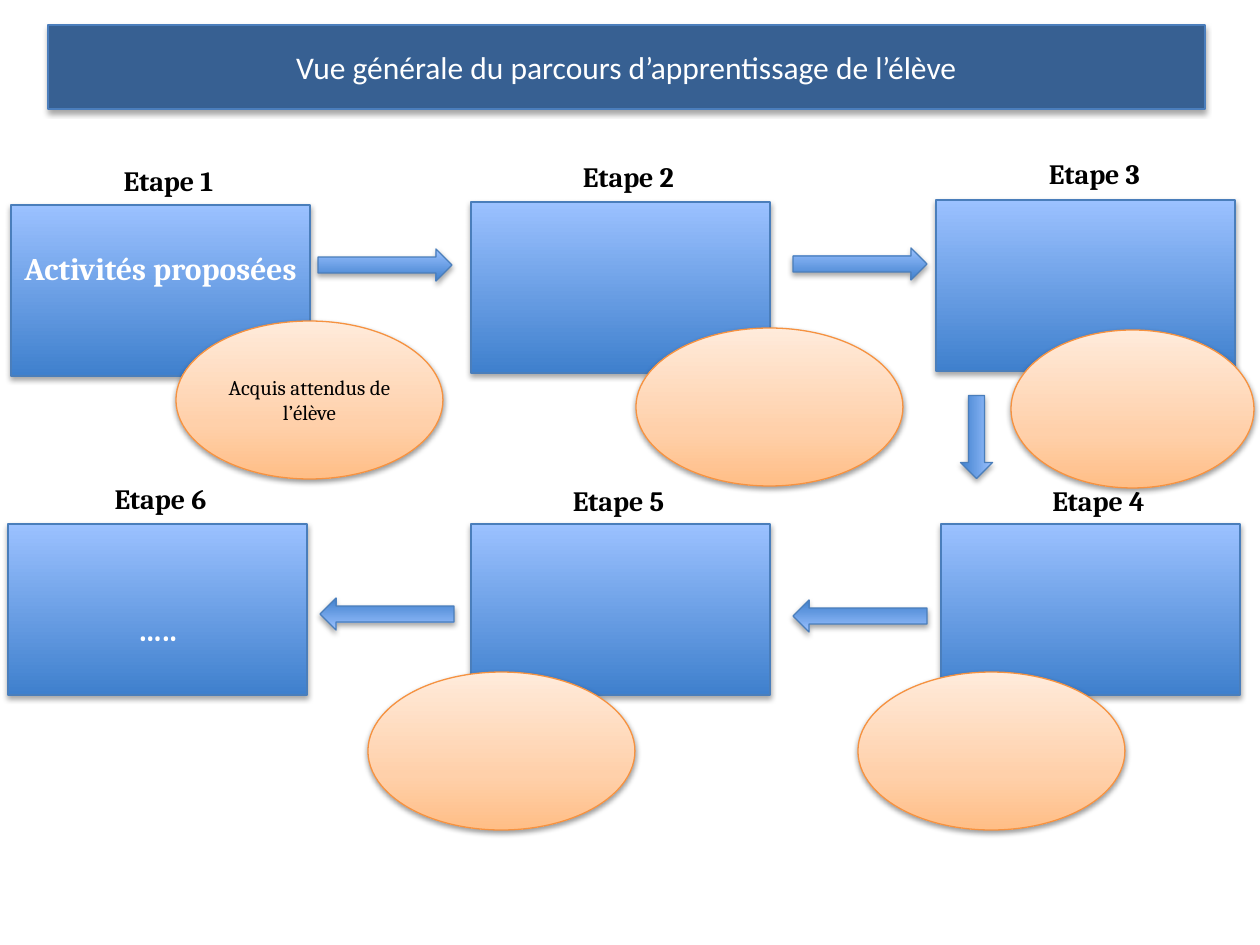
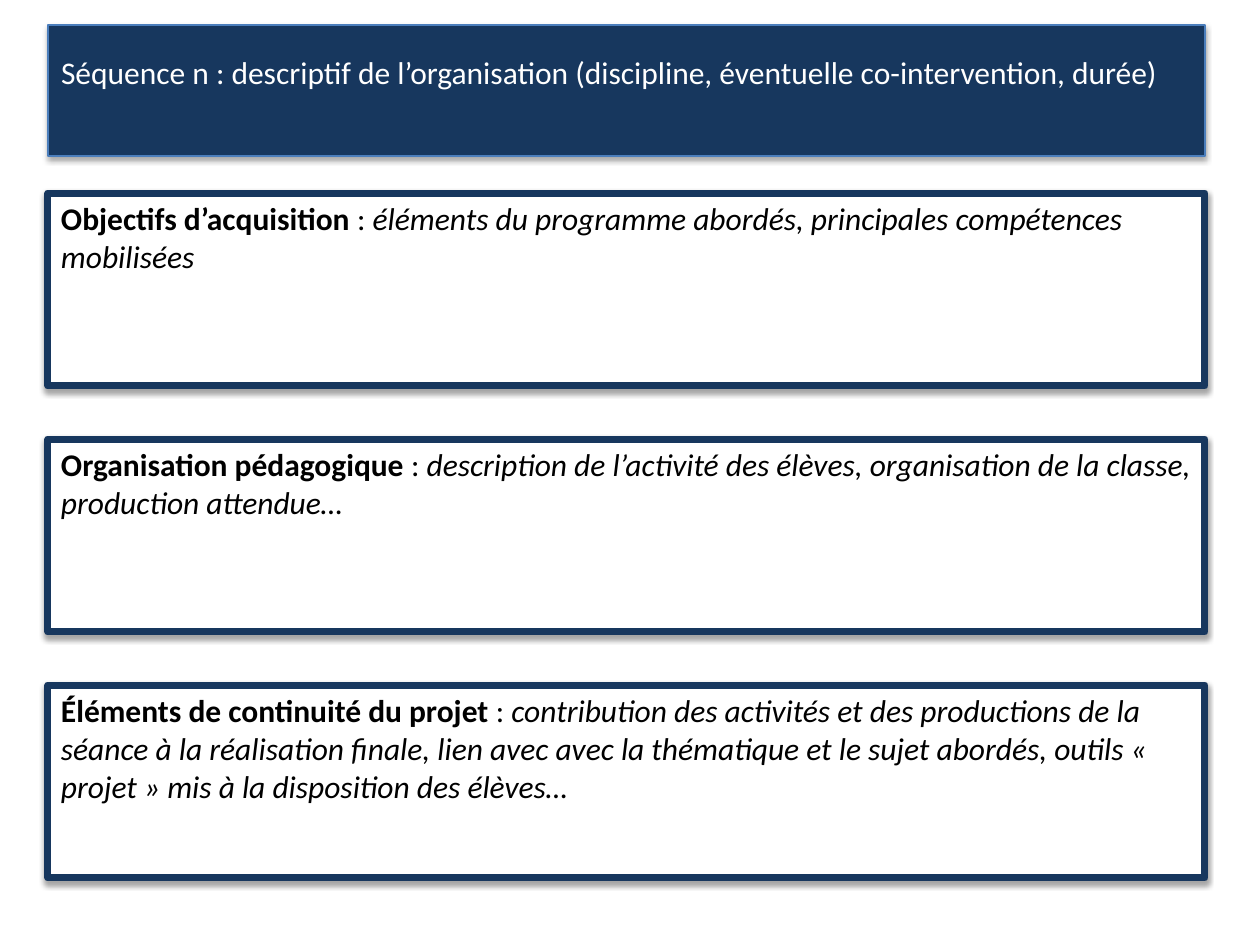
from copy import deepcopy
from dataclasses import dataclass

from lxml import etree
from pptx import Presentation
from pptx.dml.color import RGBColor
from pptx.enum.shapes import MSO_SHAPE
from pptx.enum.text import MSO_ANCHOR, MSO_AUTO_SIZE, PP_ALIGN
from pptx.oxml.ns import qn
from pptx.util import Pt

RECT, OVAL, ARROW = MSO_SHAPE.RECTANGLE, MSO_SHAPE.OVAL, MSO_SHAPE.RIGHT_ARROW
TOP, MIDDLE = MSO_ANCHOR.TOP, MSO_ANCHOR.MIDDLE
LEFT, CENTER = PP_ALIGN.LEFT, PP_ALIGN.CENTER
NO_FIT = MSO_AUTO_SIZE.NONE
TITLE_ONLY = 5
EMU_PER_PX = 914400 / 126


@dataclass(frozen=True)
class Theme:
    sans: str = "Calibri"
    serif: str = "Cambria"
    body: int = 18
    label: int = 16
    small: int = 12
    white: str = "FFFFFF"
    black: str = "000000"
    band: str = "376092"
    navy: str = "17375E"
    band_line: str = "4B7EBC"
    blue_line: str = "4A7EBB"
    orange_line: str = "F69240"
    blue: tuple = ((0, "9BC1FF"), (1, "3F80CD"))
    orange: tuple = ((0, "FFEBDB"), (0.65, "FFD0AA"), (1, "FFBE86"))
    thin: float = 0.75
    thick: float = 4


T = Theme()
MARGIN_X, BAND_W = 48, 1157
BOX_W, BOX_H = 299, 171
LABEL_W, LABEL_H = 315, 48
OVAL_W, OVAL_H = 267, 158
ARROW_W, ARROW_H = 134, 32
PANEL_TOP, PANEL_H, PANEL_STEP = 193, 193, 246
INSET_X, INSET_Y, LINE_SHIFT = 13, 6, 38


def px(n):
    return round(n * EMU_PER_PX)


def rgb(code):
    return RGBColor.from_string(code)


def set_gradient(shape, stops):
    shape.fill.gradient()
    shape.fill.gradient_angle = 270
    gs_list = shape._element.spPr.find(".//" + qn("a:gsLst"))
    while len(gs_list) < len(stops):
        gs_list.append(deepcopy(gs_list[-1]))
    for stop, (position, color) in zip(shape.fill.gradient_stops, stops):
        stop.position = position
        stop.color.rgb = rgb(color)


def set_shadow(shape, alpha=35, dist=23000):
    shape.shadow.inherit = False
    effects = shape._element.spPr.find(qn("a:effectLst"))
    shadow = etree.SubElement(effects, qn("a:outerShdw"), blurRad="40000",
                              dist=str(dist), dir="5400000", rotWithShape="0")
    color = etree.SubElement(shadow, qn("a:srgbClr"), val=T.black)
    etree.SubElement(color, qn("a:alpha"), val=str(alpha * 1000))


def style(shape, fill, line, width=T.thin, **shadow):
    if isinstance(fill, str):
        shape.fill.solid()
        shape.fill.fore_color.rgb = rgb(fill)
    else:
        set_gradient(shape, fill)
    shape.line.color.rgb = rgb(line)
    shape.line.width = Pt(width)
    set_shadow(shape, **shadow)


def write(shape, *runs, font=T.sans, size=T.body, color=T.white, bold=False,
          align=CENTER, anchor=MIDDLE, shift_top=0, shift_bottom=0):
    tf = shape.text_frame
    tf.word_wrap = True
    tf.auto_size = NO_FIT
    tf.vertical_anchor = anchor
    tf.margin_left = tf.margin_right = px(INSET_X)
    tf.margin_top = px(INSET_Y + shift_top)
    tf.margin_bottom = px(INSET_Y + shift_bottom)
    p = tf.paragraphs[0]
    p.alignment = align
    for run in runs:
        text, run_bold, italic = (run, bold, False) if isinstance(run, str) else run
        r = p.add_run()
        r.text = text
        r.font.name, r.font.size = font, Pt(size)
        r.font.bold, r.font.italic = run_bold, italic
        r.font.color.rgb = rgb(color)


def add_shape(s, kind, x, y, w, h):
    return s.shapes.add_shape(kind, px(x), px(y), px(w), px(h))


def add_band(s, text, height, fill, **fmt):
    sp = s.shapes.title
    sp.left, sp.top, sp.width, sp.height = px(MARGIN_X), px(25), px(BAND_W), px(height)
    style(sp, fill, T.band_line)
    write(sp, text, **fmt)


def add_box(s, x, y, text="", **fmt):
    sp = add_shape(s, RECT, x, y, BOX_W, BOX_H)
    style(sp, T.blue, T.blue_line)
    if text:
        write(sp, text, font=T.serif, bold=True, shift_top=LINE_SHIFT, **fmt)


def add_label(s, x, y, text):
    sp = s.shapes.add_textbox(px(x), px(y), px(LABEL_W), px(LABEL_H))
    write(sp, text, font=T.serif, size=T.label, color=T.black, bold=True, anchor=TOP)


def add_outcome(s, x, y, text="", w=OVAL_W):
    sp = add_shape(s, OVAL, x, y, w, OVAL_H)
    style(sp, T.orange, T.orange_line, alpha=38, dist=20000)
    if text:
        write(sp, text, font=T.serif, size=T.small, color=T.black)


def add_arrow(s, x, y, w=ARROW_W, rotation=0):
    sp = add_shape(s, ARROW, x, y, w, ARROW_H)
    sp.rotation = rotation
    style(sp, T.blue, T.blue_line)


def add_panel(s, y, heading, detail):
    sp = add_shape(s, RECT, MARGIN_X, y, BAND_W, PANEL_H)
    style(sp, T.white, T.navy, T.thick)
    write(sp, (heading + " ", True, False), (": ", False, False), (detail, False, True),
          color=T.black, align=LEFT, anchor=TOP)


def build_pathway(s):
    add_band(s, "Vue générale du parcours d’apprentissage de l’élève", 84, T.band)
    boxes = [
        (11, 205, "Activités proposées", TOP),
        (471, 202, "", TOP),
        (936, 200, "", TOP),
        (941, 524, "", TOP),
        (471, 524, "", TOP),
        (8, 524, "…..", MIDDLE),
    ]
    for x, y, text, anchor in boxes:
        add_box(s, x, y, text, anchor=anchor)
    labels = [(11, 158), (471, 154), (937, 151), (941, 478), (461, 478), (3, 476)]
    for step, (x, y) in enumerate(labels, 1):
        add_label(s, x, y, f"Etape {step}")
    add_arrow(s, 318, 249)
    add_arrow(s, 793, 248)
    add_arrow(s, 935, 421, w=83, rotation=90)
    add_arrow(s, 793, 600, rotation=180)
    add_arrow(s, 320, 598, rotation=180)
    add_outcome(s, 176, 321, "Acquis attendus de l’élève")
    add_outcome(s, 636, 328)
    add_outcome(s, 1011, 330, w=243)
    add_outcome(s, 858, 672)
    add_outcome(s, 368, 672)


def build_sequence(s):
    add_band(s, "Séquence n : descriptif de l’organisation "
                "(discipline, éventuelle co-intervention, durée)",
             131, T.navy, align=LEFT, shift_bottom=LINE_SHIFT)
    panels = [
        ("Objectifs d’acquisition",
         "éléments du programme abordés, principales compétences mobilisées"),
        ("Organisation pédagogique",
         "description de l’activité des élèves, organisation de la classe, "
         "production attendue…"),
        ("Éléments de continuité du projet",
         "contribution des activités et des productions de la séance à la "
         "réalisation finale, lien avec avec la thématique et le sujet abordés, "
         "outils « projet » mis à la disposition des élèves…"),
    ]
    for i, (heading, detail) in enumerate(panels):
        add_panel(s, PANEL_TOP + i * PANEL_STEP, heading, detail)


def main():
    prs = Presentation()
    prs.slide_width, prs.slide_height = px(1260), px(945)
    for build in (build_pathway, build_sequence):
        build(prs.slides.add_slide(prs.slide_layouts[TITLE_ONLY]))
    prs.save("out.pptx")


if __name__ == "__main__":
    main()
